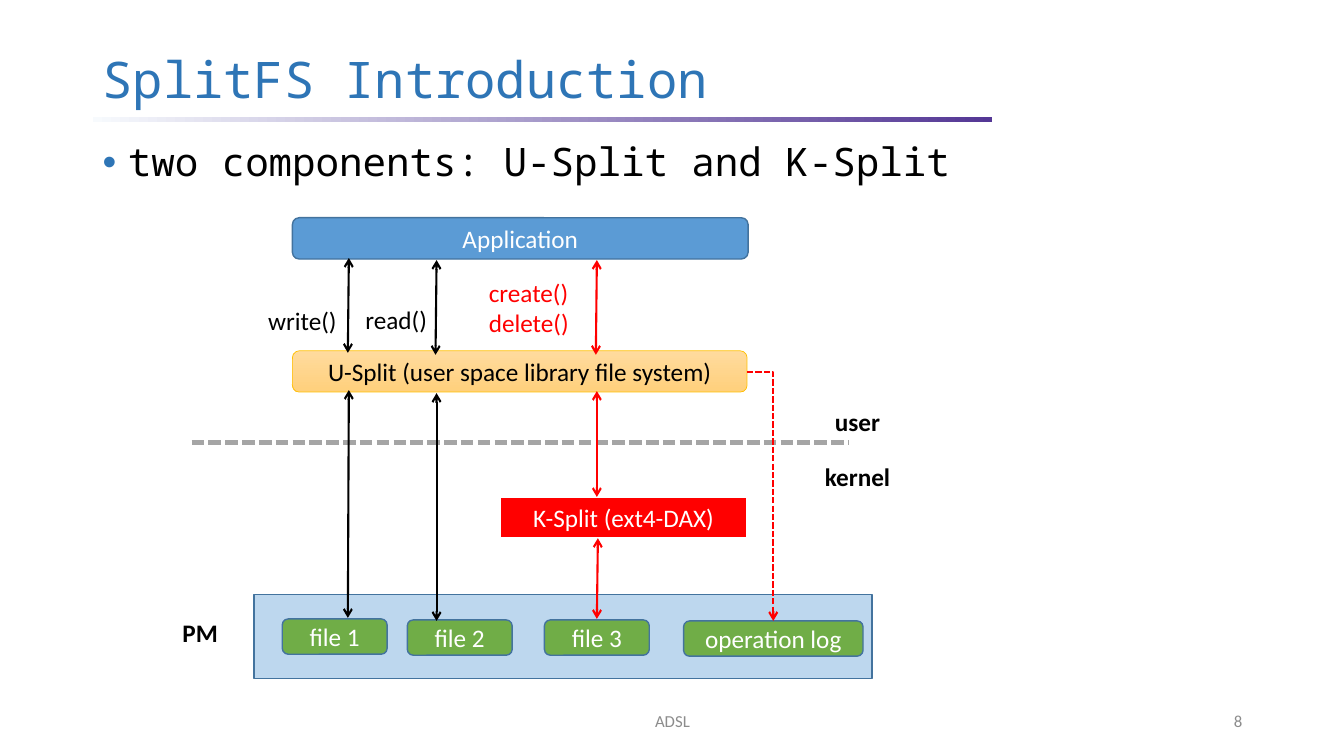
from dataclasses import dataclass

from lxml.etree import SubElement
from pptx import Presentation
from pptx.dml.color import RGBColor
from pptx.enum.dml import MSO_LINE
from pptx.enum.shapes import MSO_CONNECTOR, MSO_SHAPE
from pptx.enum.text import MSO_ANCHOR, MSO_AUTO_SIZE, PP_ALIGN
from pptx.oxml.ns import qn
from pptx.util import Inches, Pt


@dataclass(frozen=True)
class Theme:
    """Colours, fonts and type sizes of the deck."""
    sans: str = "Calibri"
    mono: str = "Noto Sans Mono"
    title_size: int = 36
    body_size: int = 28
    label_size: int = 18
    footer_size: int = 12
    black: str = "000000"
    white: str = "FFFFFF"
    heading: str = "2E75B6"
    muted: str = "8C8C8C"
    red: str = "FF0000"
    blue: str = "5B9BD5"
    edge: str = "43739E"
    green: str = "70AD47"
    memory: str = "BDD7EE"
    divider: str = "A5A5A5"
    amber_edge: str = "FFC000"
    amber: tuple = ("FFDB9E", "FFD07C")
    rule: tuple = ("F7FAFD", "543795")


THEME = Theme()


def write_text(frame, text, font=THEME.sans, size=THEME.label_size, color=THEME.black,
               bold=False, align=PP_ALIGN.CENTER, anchor=MSO_ANCHOR.TOP,
               spacing=None, bullet=None, grow=False):
    """Fill a text frame, one paragraph for each line of text."""
    frame.word_wrap = True
    frame.vertical_anchor = anchor
    frame.auto_size = MSO_AUTO_SIZE.SHAPE_TO_FIT_TEXT if grow else MSO_AUTO_SIZE.NONE
    for index, line in enumerate(text.split("\n")):
        para = frame.add_paragraph() if index else frame.paragraphs[0]
        para.alignment = align
        if spacing:
            para.line_spacing = spacing
        if bullet:
            properties = para._p.get_or_add_pPr()
            properties.set("marL", str(Inches(0.25)))
            properties.set("indent", str(Inches(-0.27)))
            bullet_color = SubElement(properties, qn("a:buClr"))
            SubElement(bullet_color, qn("a:srgbClr"), val=bullet)
            SubElement(properties, qn("a:buFont"), typeface="Arial")
            SubElement(properties, qn("a:buChar"), char="•")
        span = para.add_run()
        span.text = line
        span.font.name = font
        span.font.size = Pt(size)
        span.font.bold = bold
        span.font.color.rgb = RGBColor.from_string(color)


class Page:
    """Draws styled elements on the current slide."""

    def __init__(self, deck, theme):
        """Add a blank slide to the deck."""
        self.theme = theme
        self.shapes = deck.slides.add_slide(deck.slide_layouts[6]).shapes

    def text(self, area, text, **style):
        """Add a text box."""
        box = self.shapes.add_textbox(*map(Inches, area))
        write_text(box.text_frame, text, **style)

    def box(self, area, fill, edge=None, text=None, kind=MSO_SHAPE.ROUNDED_RECTANGLE,
            width=1, angle=0, color=THEME.white):
        """Add a preset shape with a solid fill or a pair of gradient colours."""
        box = self.shapes.add_shape(kind, *map(Inches, area))
        box.shadow.inherit = False
        if isinstance(fill, tuple):
            box.fill.gradient()
            box.fill.gradient_angle = angle
            for stop, stop_color in zip(box.fill.gradient_stops, fill):
                stop.color.rgb = RGBColor.from_string(stop_color)
        else:
            box.fill.solid()
            box.fill.fore_color.rgb = RGBColor.from_string(fill)
        if edge:
            box.line.color.rgb = RGBColor.from_string(edge)
            box.line.width = Pt(width)
        else:
            box.line.fill.background()
        if text:
            write_text(box.text_frame, text, color=color, anchor=MSO_ANCHOR.MIDDLE)

    def line(self, start, end, color, width=1.5, dashed=False, ends=(), bent=False):
        """Add a straight or right-angled connector with optional arrowheads."""
        kind = MSO_CONNECTOR.ELBOW if bent else MSO_CONNECTOR.STRAIGHT
        connector = self.shapes.add_connector(kind, *map(Inches, start + end))
        connector.line.color.rgb = RGBColor.from_string(color)
        connector.line.width = Pt(width)
        if dashed:
            connector.line.dash_style = MSO_LINE.SQUARE_DOT
        properties = connector._element.spPr
        if bent:
            properties.find(qn("a:prstGeom")).set("prst", "bentConnector2")
        for tag in ends:
            SubElement(properties.find(qn("a:ln")), qn(tag), type="arrow")
        SubElement(properties, qn("a:effectLst"))


def draw_frame(page):
    """Draw the heading, the bullet and the footer."""
    theme = page.theme
    page.box((0.92, 1.16, 8.92, 0.05), theme.rule, kind=MSO_SHAPE.RECTANGLE)
    page.text((0.92, 0.47, 8.81, 0.69), "SplitFS Introduction", font=theme.mono,
              size=theme.title_size, color=theme.heading, align=PP_ALIGN.LEFT,
              anchor=MSO_ANCHOR.MIDDLE, spacing=0.9)
    page.text((0.92, 1.37, 11.5, 5.4), "two components: U-Split and K-Split",
              font=theme.mono, size=theme.body_size, align=PP_ALIGN.LEFT,
              spacing=0.9, bullet=theme.heading)
    for left, width, text, align in ((4.42, 4.5, "ADSL", PP_ALIGN.CENTER),
                                     (9.42, 3, "8", PP_ALIGN.RIGHT)):
        page.text((left, 6.95, width, 0.4), text, size=theme.footer_size,
                  color=theme.muted, align=align, anchor=MSO_ANCHOR.MIDDLE)


def draw_layers(page):
    """Draw the software layers, the persistent memory and its files."""
    theme = page.theme
    page.box((2.9, 2.16, 4.52, 0.41), theme.blue, theme.edge, "Application")
    page.box((2.9, 3.48, 4.51, 0.41), theme.amber, theme.amber_edge,
             "U-Split (user space library file system)",
             width=0.5, angle=270, color=theme.black)
    page.line((1.9, 4.39), (8.42, 4.39), theme.divider, width=3, dashed=True)
    page.box((4.96, 4.93, 2.45, 0.41), theme.red, theme.white, "K-Split (ext4-DAX)",
             kind=MSO_SHAPE.RECTANGLE, width=1.5)
    page.box((2.52, 5.9, 6.13, 0.83), theme.memory, theme.edge, kind=MSO_SHAPE.RECTANGLE)
    for left, top, width, text in ((2.8, 6.14, 1.04, "file 1"), (4.04, 6.15, 1.04, "file 2"),
                                   (5.4, 6.15, 1.04, "file 3"),
                                   (6.78, 6.16, 1.78, "operation log")):
        page.box((left, top, width, 0.35), theme.green, theme.edge, text)


def draw_calls(page):
    """Draw the labels and the arrows between the layers."""
    theme = page.theme
    for left, top, width, text, bold in ((8.01, 3.98, 0.99, "user", True),
                                         (8.01, 4.53, 0.99, "kernel", True),
                                         (1.68, 6.08, 0.61, "PM", True),
                                         (2.52, 2.98, 0.96, "write()", False),
                                         (3.45, 2.97, 0.96, "read()", False)):
        page.text((left, top, width, 0.4), text, bold=bold, grow=True)
    page.text((4.75, 2.7, 1.01, 0.71), "create()\ndelete()", color=theme.red,
              align=PP_ALIGN.LEFT, grow=True)
    for start, end, color in (((3.46, 2.56), (3.45, 3.5), theme.black),
                              ((3.46, 3.87), (3.45, 6.13), theme.black),
                              ((4.33, 2.58), (4.32, 3.52), theme.black),
                              ((4.33, 3.9), (4.33, 6.16), theme.black),
                              ((5.92, 2.58), (5.91, 3.52), theme.red),
                              ((5.92, 3.88), (5.92, 4.93), theme.red),
                              ((5.93, 5.34), (5.92, 6.14), theme.red)):
        page.line(start, end, color, ends=("a:headEnd", "a:tailEnd"))
    page.line((7.41, 3.69), (7.67, 6.16), theme.red, dashed=True,
              ends=("a:tailEnd",), bent=True)


def main():
    """Build and save the deck."""
    deck = Presentation()
    deck.slide_width, deck.slide_height = Inches(13.33), Inches(7.5)
    page = Page(deck, THEME)
    draw_frame(page)
    draw_layers(page)
    draw_calls(page)
    deck.save("out.pptx")


if __name__ == "__main__":
    main()
